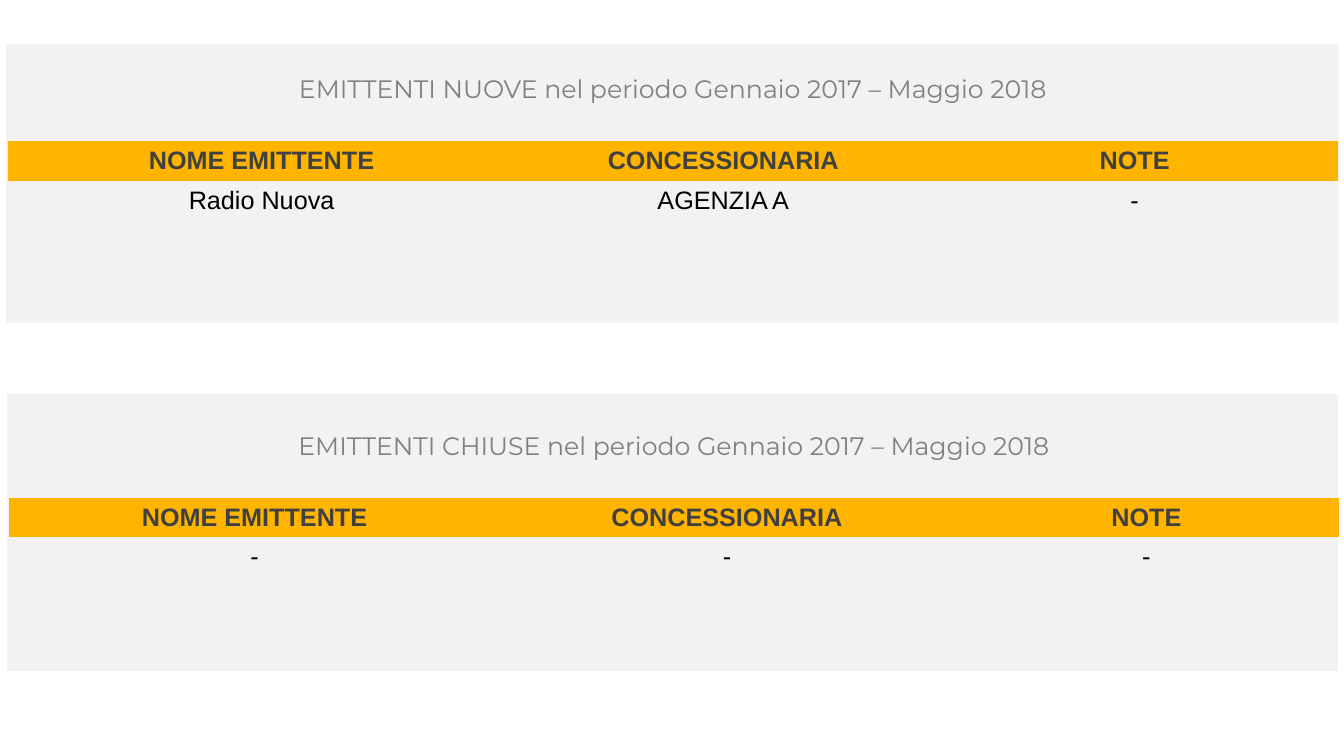
from pptx import Presentation
from pptx.dml.color import RGBColor
from pptx.enum.shapes import MSO_SHAPE
from pptx.enum.text import MSO_ANCHOR, PP_ALIGN
from pptx.util import Inches, Pt

RECTANGLE = MSO_SHAPE.RECTANGLE
MIDDLE = MSO_ANCHOR.MIDDLE
CENTER = PP_ALIGN.CENTER
PLAIN_TABLE = "{2D5ABB26-0587-4C30-8999-92F81FD0307C}"


def color(code):
    return RGBColor.from_string(code)


def write(cell, text, font="Arial", size=18, ink="000000", bold=False):
    cell.vertical_anchor = MIDDLE
    paragraph = cell.text_frame.paragraphs[0]
    paragraph.alignment = CENTER
    run = paragraph.add_run()
    run.text = text
    run.font.name = font
    run.font.size = Pt(size)
    run.font.bold = bold
    run.font.color.rgb = color(ink)


class StationSlide:
    panel_fill = "F2F2F2"
    header_fill = "FFB400"
    header_ink = "404040"
    title_ink = "808080"
    title_font = "Montserrat"
    title_bottom = 4.8

    def __init__(self, deck):
        self.column = deck.slide_width / 100
        self.row = deck.slide_height / 100
        self.slide = deck.slides.add_slide(deck.slide_layouts[6])

    def across(self, columns):
        return round(columns * self.column)

    def down(self, rows):
        return round(rows * self.row)

    def panel(self, top, outline):
        panel = self.slide.shapes.add_shape(
            RECTANGLE, self.across(0.49), self.down(top),
            self.across(99.1), self.down(36.8))
        panel.shadow.inherit = False
        panel.fill.solid()
        panel.fill.fore_color.rgb = color(self.panel_fill)
        panel.line.color.rgb = color(outline)
        panel.line.width = Pt(0.75)

    def stations(self, left, top, widths, heights, title, entries):
        frame = self.slide.shapes.add_table(
            len(heights), len(widths), self.across(left), self.down(top),
            self.across(sum(widths)), self.down(sum(heights)))
        frame._element.xpath(".//a:tableStyleId")[0].text = PLAIN_TABLE
        table = frame.table
        table.first_row = table.horz_banding = False
        for column, width in zip(table.columns, widths):
            column.width = self.across(width)
        for row, height in zip(table.rows, heights):
            row.height = self.down(height)
        for cell in table.iter_cells():
            cell.fill.background()

        title_cell = table.cell(0, 0)
        title_cell.merge(table.cell(0, len(widths) - 1))
        title_cell.margin_bottom = self.down(self.title_bottom)
        write(title_cell, title, font=self.title_font, ink=self.title_ink)

        headings = ("NOME EMITTENTE", "CONCESSIONARIA", "NOTE")
        for index, (heading, entry) in enumerate(zip(headings, entries)):
            header = table.cell(1, index)
            header.fill.solid()
            header.fill.fore_color.rgb = color(self.header_fill)
            write(header, heading, ink=self.header_ink, bold=True)
            write(table.cell(2, index), entry)


def main():
    deck = Presentation()
    deck.slide_width = Inches(13.33)
    deck.slide_height = Inches(7.5)
    page = StationSlide(deck)

    page.panel(5.93, "F2F2F2")
    page.stations(
        0.6, 9.07, (37.73, 30.98, 30.23), (9.5, 5.33, 5.2, 5.2, 5.2),
        "EMITTENTI NUOVE nel periodo Gennaio 2017 – Maggio 2018",
        ("Radio Nuova", "AGENZIA A", "-"))

    page.panel(52.07, "FFFFFF")
    page.stations(
        0.68, 56.27, (36.53, 33.76, 28.66), (9.6, 5.2, 5.2, 5.47, 5.47),
        "EMITTENTI CHIUSE nel periodo Gennaio 2017 – Maggio 2018",
        ("-", "-", "-"))

    deck.save("out.pptx")


if __name__ == "__main__":
    main()
